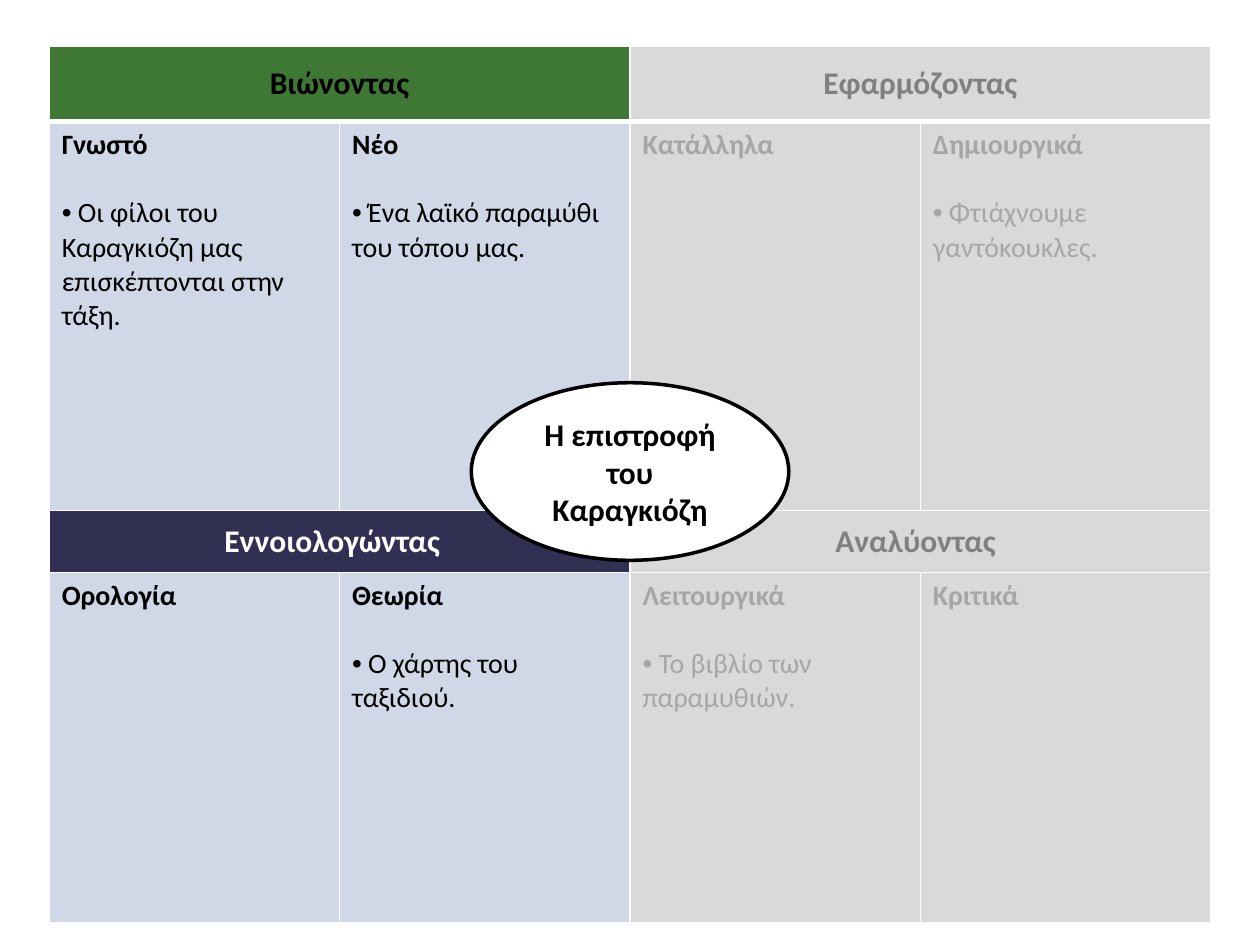
"""Builds the four-quadrant learning plan for the shadow-theatre lesson."""
from lxml.etree import SubElement
from pptx import Presentation
from pptx.dml.color import RGBColor
from pptx.enum.shapes import MSO_SHAPE as Shape
from pptx.enum.text import MSO_ANCHOR as Anchor, PP_ALIGN as Align
from pptx.oxml.ns import qn
from pptx.util import Inches, Pt

BLACK, WHITE, GREY_FILL = "000000", "FFFFFF", "D9D9D9"
BLUE_FILL, GREY_HEAD, GREY_TEXT = "D0D8E8", "808080", "A6A6A6"

# Row heights and sizes below are percentages of the slide.
ROW_HEIGHTS = [8, 41.2, 6.53, 37.1]

HEADINGS = [
    dict(row=0, column=0, text="Βιώνοντας", fill="3F7835", color=BLACK),
    dict(row=0, column=2, text="Εφαρμόζοντας", fill=GREY_FILL, color=GREY_HEAD),
    dict(row=2, column=0, text="Εννοιολογώντας", fill="18163D", color=WHITE,
         opacity=89, inset=13.9),
    dict(row=2, column=2, text="Αναλύοντας", fill=GREY_FILL, color=GREY_HEAD,
         inset=16.3),
]

ACTIVITIES = {
    1: [("Γνωστό", "Οι φίλοι του Καραγκιόζη μας επισκέπτονται στην τάξη."),
        ("Νέο", "Ένα λαϊκό παραμύθι του τόπου μας."),
        ("Κατάλληλα", None),
        ("Δημιουργικά", "Φτιάχνουμε γαντόκουκλες.")],
    3: [("Ορολογία", None),
        ("Θεωρία", "Ο χάρτης του ταξιδιού."),
        ("Λειτουργικά", "Το βιβλίο των παραμυθιών."),
        ("Κριτικά", None)],
}


def rgb(value):
    """Turn a hex string into a colour."""
    return RGBColor.from_string(value)


def write(paragraph, text, size=16, color=BLACK, bold=True, align=Align.LEFT,
          bullet=False, before=0, font="Calibri"):
    """Put formatted text into a paragraph."""
    if bullet:
        properties = paragraph._p.get_or_add_pPr()
        properties.set("marL", "0")
        properties.set("indent", "0")
        SubElement(properties, qn("a:buFont")).set("typeface", "Arial")
        SubElement(properties, qn("a:buChar")).set("char", "•")
        text = " " + text
    paragraph.alignment = align
    if before:
        paragraph.space_before = Pt(before)
    run = paragraph.add_run()
    run.text = text
    run.font.name, run.font.size, run.font.bold = font, Pt(size), bold
    run.font.color.rgb = rgb(color)


class Board:
    """Holds the slide and the shared look of its elements."""

    def __init__(self, width=10, height=7.5):
        """Start a presentation with one blank slide."""
        self.deck = Presentation()
        self.deck.slide_width, self.deck.slide_height = Inches(width), Inches(height)
        self.slide = self.deck.slides.add_slide(self.deck.slide_layouts[6])

    def x(self, percent):
        """Give a share of the slide width."""
        return round(self.deck.slide_width * percent / 100)

    def y(self, percent):
        """Give a share of the slide height."""
        return round(self.deck.slide_height * percent / 100)

    def grid(self, left, top, width, row_heights, columns=4):
        """Add a table with equal columns."""
        frame = self.slide.shapes.add_table(
            len(row_heights), columns, self.x(left), self.y(top),
            self.x(width), self.y(sum(row_heights)))
        self.table = frame.table
        for column in self.table.columns:
            column.width = self.x(width / columns)
        for row, height in zip(self.table.rows, row_heights):
            row.height = self.y(height)

    def cell(self, row, column, fill, opacity=100):
        """Give a cell its white borders and fill."""
        cell = self.table.cell(row, column)
        properties = cell._tc.get_or_add_tcPr()
        heavy = {"B": 0, "T": 1}
        for side in "LRTB":
            weight = 3 if heavy.get(side) == row else 1
            line = SubElement(properties, qn(f"a:ln{side}"), w=str(Pt(weight)))
            paint = SubElement(line, qn("a:solidFill"))
            SubElement(paint, qn("a:srgbClr"), val=WHITE)
        cell.fill.solid()
        cell.fill.fore_color.rgb = rgb(fill)
        if opacity < 100:
            shade = properties.find(qn("a:solidFill")).find(qn("a:srgbClr"))
            SubElement(shade, qn("a:alpha"), val=str(opacity * 1000))
        return cell

    def heading(self, row, column, text, fill, color, opacity=100, inset=None):
        """Add a heading over two columns, centred or indented."""
        heading = self.cell(row, column, fill, opacity)
        heading.merge(self.cell(row, column + 1, fill, opacity))
        heading.vertical_anchor = Anchor.MIDDLE
        if inset:
            heading.margin_left = self.x(inset)
        write(heading.text_frame.paragraphs[0], text, size=18, color=color,
              align=Align.LEFT if inset else Align.CENTER)

    def activity(self, row, column, name, task):
        """Add a named cell with an optional bulleted task."""
        fill, color = (BLUE_FILL, BLACK) if column < 2 else (GREY_FILL, GREY_TEXT)
        body = self.cell(row, column, fill).text_frame
        write(body.paragraphs[0], name, color=color)
        if task:
            write(body.add_paragraph(), task, color=color, bold=False,
                  bullet=True, before=19.5)

    def oval(self, left, top, width, height, text):
        """Add the outlined central topic."""
        oval = self.slide.shapes.add_shape(
            Shape.OVAL, self.x(left), self.y(top), self.x(width), self.y(height))
        oval.shadow.inherit = False
        oval.fill.solid()
        oval.fill.fore_color.rgb = rgb(WHITE)
        oval.line.color.rgb, oval.line.width = rgb(BLACK), Pt(2)
        oval.text_frame.word_wrap = True
        oval.text_frame.vertical_anchor = Anchor.MIDDLE
        write(oval.text_frame.paragraphs[0], text, size=18, align=Align.CENTER)


def main():
    """Build and save the slide."""
    board = Board()
    board.grid(3.9, 4.85, 92.2, ROW_HEIGHTS)
    for heading in HEADINGS:
        board.heading(**heading)
    for row, activities in ACTIVITIES.items():
        for column, (name, task) in enumerate(activities):
            board.activity(row, column, name, task)
    board.oval(37.4, 40.5, 25.2, 18.8, "Η επιστροφή του Καραγκιόζη")
    board.deck.save("out.pptx")


if __name__ == "__main__":
    main()
